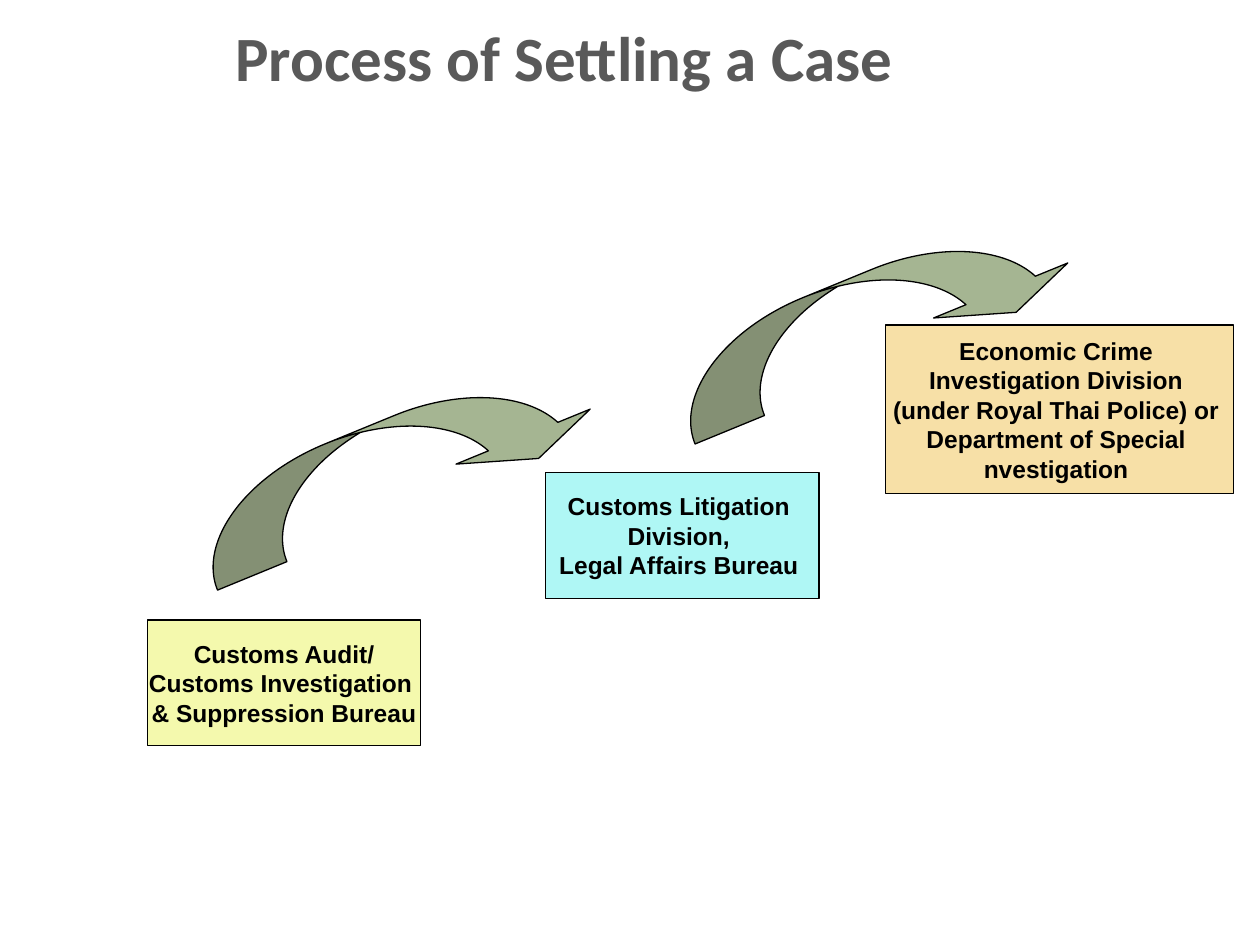
from dataclasses import dataclass

from pptx import Presentation
from pptx.dml.color import RGBColor
from pptx.enum import shapes, text
from pptx.slide import Slide
from pptx.util import Inches, Pt


@dataclass(frozen=True)
class Theme:
    title_font: str = "Calibri"
    body_font: str = "Arial"
    title_size: float = 36
    body_size: float = 14
    line_width: float = 0.75
    title_color: str = "595959"
    ink: str = "000000"
    arrow: str = "A5B592"
    audit: str = "F4F9AD"
    litigation: str = "AFF7F5"
    crime: str = "F7E0A7"


@dataclass(frozen=True)
class Stage:
    left: float
    top: float
    width: float
    height: float
    fill: str
    lines: tuple[str, ...]


@dataclass(frozen=True)
class Arrow:
    left: float
    top: float


THEME = Theme()

STAGES = (
    Stage(1.17, 4.92, 2.17, 1, THEME.audit,
          ("Customs Audit/", "Customs Investigation ", "& Suppression Bureau")),
    Stage(7.03, 2.58, 2.76, 1.34, THEME.crime,
          ("Economic Crime ", "Investigation Division ",
           "(under Royal Thai Police) or ", "Department of Special ",
           "nvestigation ")),
    Stage(4.33, 3.75, 2.17, 1, THEME.litigation,
          ("Customs Litigation ", "Division, ", "Legal Affairs Bureau ")),
)

ARROWS = (Arrow(1.46, 3.33), Arrow(5.25, 2.17))
ARROW_WIDTH, ARROW_HEIGHT = 3.33, 0.75
ARROW_ROTATION = 337.7
ARROW_ADJUSTMENTS = (0.794, 1.535, 0.276)


def style_shape(shape, fill: str) -> None:
    shape.shadow.inherit = False
    shape.fill.solid()
    shape.fill.fore_color.rgb = RGBColor.from_string(fill)
    shape.line.color.rgb = RGBColor.from_string(THEME.ink)
    shape.line.width = Pt(THEME.line_width)


def style_font(font, name: str, size: float, color: str) -> None:
    font.name = name
    font.size = Pt(size)
    font.bold = True
    font.color.rgb = RGBColor.from_string(color)


def add_title(slide: Slide, title: str) -> None:
    box = slide.shapes.add_textbox(Inches(1.77), Inches(0.13), Inches(8.02), Inches(0.63))
    frame = box.text_frame
    frame.word_wrap = True
    frame.vertical_anchor = text.MSO_ANCHOR.MIDDLE
    frame.text = title
    style_font(frame.paragraphs[0].runs[0].font,
               THEME.title_font, THEME.title_size, THEME.title_color)


def add_stage(slide: Slide, stage: Stage) -> None:
    shape = slide.shapes.add_shape(
        shapes.MSO_SHAPE.RECTANGLE, Inches(stage.left), Inches(stage.top),
        Inches(stage.width), Inches(stage.height))
    style_shape(shape, stage.fill)
    frame = shape.text_frame
    frame.word_wrap = False
    frame.vertical_anchor = text.MSO_ANCHOR.MIDDLE
    frame.text = "\n".join(stage.lines)
    for paragraph in frame.paragraphs:
        paragraph.alignment = text.PP_ALIGN.CENTER
        style_font(paragraph.runs[0].font, THEME.body_font, THEME.body_size, THEME.ink)


def add_arrow(slide: Slide, arrow: Arrow) -> None:
    shape = slide.shapes.add_shape(
        shapes.MSO_SHAPE.CURVED_DOWN_ARROW, Inches(arrow.left), Inches(arrow.top),
        Inches(ARROW_WIDTH), Inches(ARROW_HEIGHT))
    style_shape(shape, THEME.arrow)
    shape.rotation = ARROW_ROTATION
    for index, value in enumerate(ARROW_ADJUSTMENTS):
        shape.adjustments[index] = value


def main() -> None:
    presentation = Presentation()
    presentation.slide_width = Inches(10)
    presentation.slide_height = Inches(7.5)
    slide = presentation.slides.add_slide(presentation.slide_layouts[6])
    for stage in STAGES:
        add_stage(slide, stage)
    add_title(slide, "Process of Settling a Case")
    for arrow in ARROWS:
        add_arrow(slide, arrow)
    presentation.save("out.pptx")


if __name__ == "__main__":
    main()
